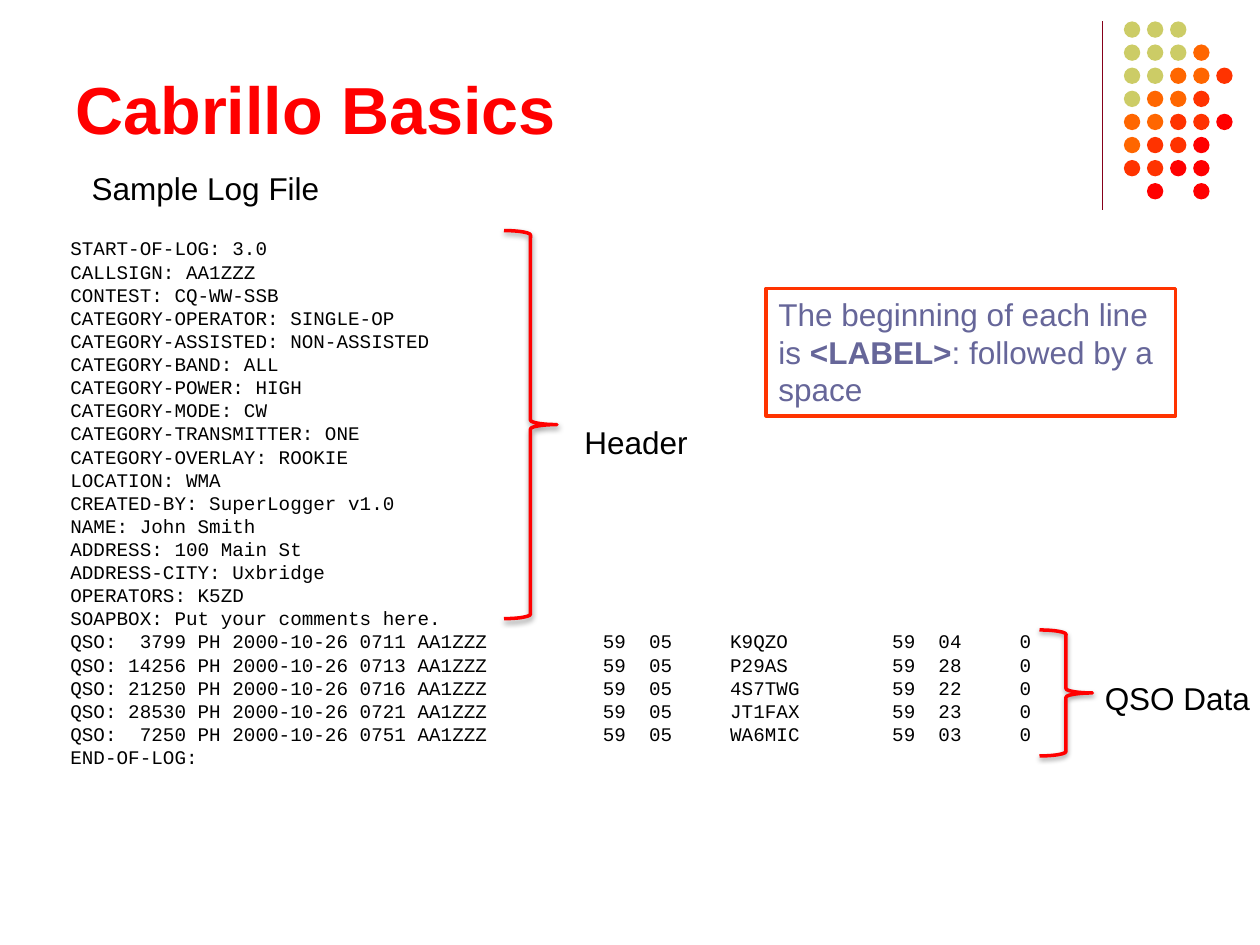
from lxml import etree
from pptx import Presentation
from pptx import util as u
from pptx.dml.color import RGBColor
from pptx.enum import shapes, text
from pptx.oxml import parse_xml
from pptx.oxml.ns import nsdecls, qn

# Content
HEAD = """START-OF-LOG: 3.0
CALLSIGN: AA1ZZZ
CONTEST: CQ-WW-SSB
CATEGORY-OPERATOR: SINGLE-OP
CATEGORY-ASSISTED: NON-ASSISTED
CATEGORY-BAND: ALL
CATEGORY-POWER: HIGH
CATEGORY-MODE: CW
CATEGORY-TRANSMITTER: ONE
CATEGORY-OVERLAY: ROOKIE
LOCATION: WMA
CREATED-BY: SuperLogger v1.0
NAME: John Smith
ADDRESS: 100 Main St
ADDRESS-CITY: Uxbridge
OPERATORS: K5ZD
SOAPBOX: Put your comments here.""".splitlines()
# frequency, time, call, zone
QSOS = [
    (3799, "0711", "K9QZO", "04"),
    (14256, "0713", "P29AS", "28"),
    (21250, "0716", "4S7TWG", "22"),
    (28530, "0721", "JT1FAX", "23"),
    (7250, "0751", "WA6MIC", "03"),
]
LOG = HEAD + [
    f"QSO: {freq:>5} PH 2000-10-26 {time} AA1ZZZ{'':10}59  05     {call:<14}59  {zone}     0"
    for freq, time, call, zone in QSOS
] + ["END-OF-LOG:"]
NOTE = [[("The beginning of each line is ", False), ("<LABEL>", True),
         (": followed by a space", False)]]
LABELS = [
    ("Sample Log File", (0.63, 1.29, 2.1, 0.4)),
    ("Header", (4.54, 3.31, 1.03, 0.4)),
    ("QSO Data", (8.67, 5.34, 1.37, 0.4)),
]
BRACES = [(4, 1.83, 0.42, 3.08), (8.25, 5, 0.42, 1)]
DOTS = ["ggg", "gggo", "ggoor", "goor", "oorrR", "orrR", "rrRR", " R R"]
HUES = {"g": "CCCC66", "o": "FF6600", "r": "FF3300", "R": "FF0000"}

deck = Presentation()
deck.slide_width, deck.slide_height = u.Inches(10), u.Inches(7.5)
slide = deck.slides.add_slide(deck.slide_layouts[6])


def rgb(code):
    return RGBColor.from_string(code)


def place(box):
    return [u.Inches(n) for n in box]


def write(shape, lines, size=18, font="Arial", color="000000", bold=False,
          wrap=False, anchor=text.MSO_ANCHOR.TOP, grow=True):
    """Fill a shape; each line is a string or a list of (text, bold) runs."""
    frame = shape.text_frame
    frame.word_wrap = wrap
    frame.vertical_anchor = anchor
    if grow:
        frame.auto_size = text.MSO_AUTO_SIZE.SHAPE_TO_FIT_TEXT
    for i, line in enumerate(lines):
        para = frame.add_paragraph() if i else frame.paragraphs[0]
        para.alignment = text.PP_ALIGN.LEFT
        for words, strong in [(line, bold)] if isinstance(line, str) else line:
            run = para.add_run()
            run.text = words
            run.font.name, run.font.size = font, u.Pt(size)
            run.font.bold = strong
            run.font.color.rgb = rgb(color)


def label(box, lines, **form):
    write(slide.shapes.add_textbox(*place(box)), lines, **form)


def draw(kind, box, fill=None, line=None):
    shape = slide.shapes.add_shape(kind, *place(box))
    shape.shadow.inherit = False
    if fill:
        shape.fill.solid()
        shape.fill.fore_color.rgb = rgb(fill)
    else:
        shape.fill.background()
    if line:
        shape.line.color.rgb = rgb(line)
        shape.line.width = u.Pt(2)
    else:
        shape.line.fill.background()
    return shape


# Corner rule and dot grid
rule = slide.shapes.add_connector(shapes.MSO_CONNECTOR.STRAIGHT,
                                  *place((8.75, 0.17, 8.75, 1.67)))
rule.line.color.rgb = rgb("86001A")
rule.line.width = u.Pt(0.75)
etree.SubElement(rule._element.spPr, qn("a:effectLst"))

STEP = 0.55 / 3
for row, marks in enumerate(DOTS):
    for col, mark in enumerate(marks):
        if mark in HUES:
            draw(shapes.MSO_SHAPE.OVAL,
                 (8.92 + col * STEP, 0.17 + row * STEP, 0.13, 0.13), HUES[mark])

# Title, log and labels
label((0.5, 0.42, 8.17, 0.87), ["Cabrillo Basics"], size=38, color="FF0000",
      bold=True, wrap=True, anchor=text.MSO_ANCHOR.MIDDLE, grow=False)
label((0.46, 1.83, 7.91, 4.36), LOG, size=11, font="Courier New")
for words, box in LABELS:
    label(box, [words])

# Braces with a soft shadow below
for box in BRACES:
    brace = draw(shapes.MSO_SHAPE.RIGHT_BRACE, box, line="FF0000")
    glow = brace._element.spPr.find(qn("a:effectLst"))
    glow.append(parse_xml(
        f'<a:outerShdw {nsdecls("a")} blurRad="{u.Pt(3.1)}" dist="{u.Pt(1.6)}" '
        'dir="5400000" rotWithShape="0"><a:srgbClr val="000000">'
        '<a:alpha val="38000"/></a:srgbClr></a:outerShdw>'))

# Note on line format
note = draw(shapes.MSO_SHAPE.RECTANGLE, (6.08, 2.29, 3.25, 1.01), "FFFFFF", "FF3300")
write(note, NOTE, color="666699", wrap=True)

deck.save("out.pptx")
